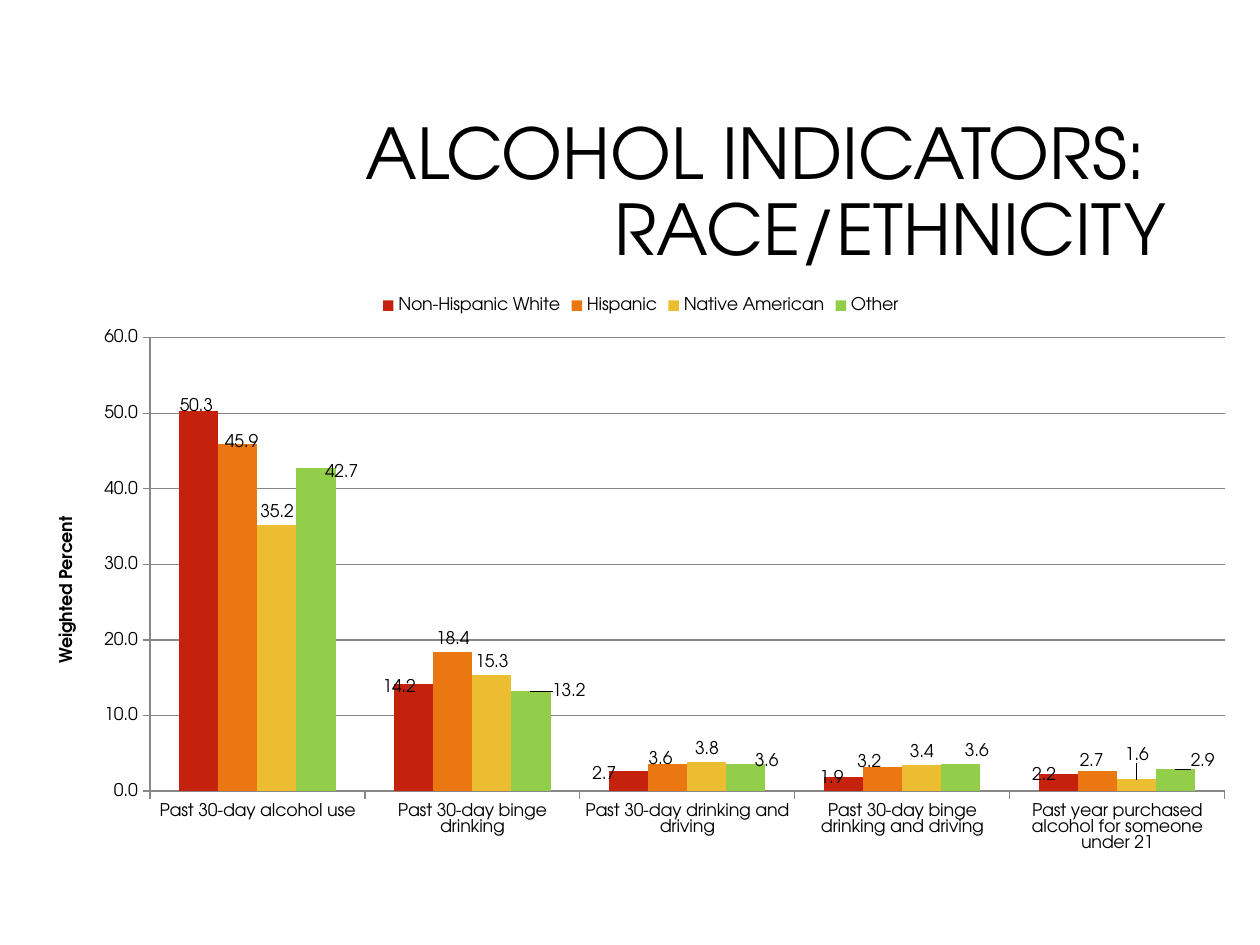
from pptx import Presentation
from pptx.chart.data import CategoryChartData
from pptx.dml.color import RGBColor
from pptx.enum.chart import (XL_CHART_TYPE, XL_LABEL_POSITION,
                             XL_LEGEND_POSITION, XL_TICK_MARK)
from pptx.enum.text import MSO_ANCHOR, PP_ALIGN
from pptx.oxml import parse_xml
from pptx.oxml.ns import nsdecls
from pptx.util import Inches, Pt

FONT = "TeX Gyre Adventor"
BLACK = RGBColor(0x00, 0x00, 0x00)
GRAY = RGBColor(0x87, 0x87, 0x87)
RED = RGBColor(0xC4, 0x22, 0x0D)
ORANGE = RGBColor(0xEB, 0x77, 0x12)
YELLOW = RGBColor(0xEC, 0xBD, 0x31)
GREEN = RGBColor(0x92, 0xCE, 0x4A)

CHART_WIDTH, CHART_HEIGHT = 9.67, 4.6
CATEGORIES = [
    "Past 30-day alcohol use",
    "Past 30-day binge drinking",
    "Past 30-day drinking and driving",
    "Past 30-day binge drinking and driving",
    "Past year purchased alcohol for someone under 21",
]
GROUPS = [
    ("Non-Hispanic White", RED, (50.3, 14.2, 2.7, 1.9, 2.2)),
    ("Hispanic", ORANGE, (45.9, 18.4, 3.6, 3.2, 2.7)),
    ("Native American", YELLOW, (35.2, 15.3, 3.8, 3.4, 1.6)),
    ("Other", GREEN, (42.7, 13.2, 3.6, 3.6, 2.9)),
]
LABEL_SHIFTS_PERCENT = {
    "Non-Hispanic White": {0: (-0.2, 1.4), 1: (-1.2, 2.8), 2: (-2, 2.8),
                           3: (-1, 2.4), 4: (-1.2, 2.4)},
    "Hispanic": {0: (0.3, 1.9), 2: (-0.6, 1.4), 3: (-1.1, 1.4),
                 4: (-0.5, 0.5)},
    "Native American": {4: (0, -1.9)},
    "Other": {0: (2.1, 2.8), 1: (3.1, 2.2), 2: (1.7, 1.7),
              3: (1.3, 0), 4: (2.2, 0.9)},
}


def layout_element(**settings):
    children = "".join(f'<c:{name} val="{value}"/>'
                       for name, value in settings.items())
    return parse_xml(f'<c:layout {nsdecls("c")}><c:manualLayout>{children}'
                     '</c:manualLayout></c:layout>')


def style_font(font, size, bold=False):
    font.name = FONT
    font.size = Pt(size)
    font.bold = bold
    font.color.rgb = BLACK


def add_title(slide):
    box = slide.shapes.add_textbox(Inches(2.38), Inches(0.84),
                                   Inches(6.97), Inches(1.41))
    frame = box.text_frame
    frame.word_wrap = True
    frame.vertical_anchor = MSO_ANCHOR.MIDDLE
    paragraph = frame.paragraphs[0]
    paragraph.alignment = PP_ALIGN.RIGHT
    paragraph.line_spacing = 0.9
    for index, text in enumerate(("ALCOHOL INDICATORS: ", "RACE/ETHNICITY")):
        if index:
            paragraph.add_line_break()
        run = paragraph.add_run()
        run.text = text
        style_font(run.font, 40)


def style_axis(axis):
    axis.major_tick_mark = XL_TICK_MARK.OUTSIDE
    axis.minor_tick_mark = XL_TICK_MARK.NONE
    axis.format.line.color.rgb = GRAY
    style_font(axis.tick_labels.font, 10)


def style_value_axis(axis):
    style_axis(axis)
    axis.minimum_scale = 0
    axis.maximum_scale = 60
    axis.major_unit = 10
    axis.has_major_gridlines = True
    axis.major_gridlines.format.line.color.rgb = GRAY
    axis.tick_labels.number_format = "0.0"
    axis.tick_labels.number_format_is_linked = False
    frame = axis.axis_title.text_frame
    frame._txBody.bodyPr.set("rot", "-5400000")
    frame._txBody.bodyPr.set("vert", "horz")
    run = frame.paragraphs[0].add_run()
    run.text = "Weighted Percent"
    style_font(run.font, 10, bold=True)


def style_series(series, color):
    series.format.fill.solid()
    series.format.fill.fore_color.rgb = color
    labels = series.data_labels
    labels.show_value = True
    labels.position = XL_LABEL_POSITION.OUTSIDE_END
    labels.number_format = "0.0"
    labels.number_format_is_linked = False
    style_font(labels.font, 10)
    shifts = LABEL_SHIFTS_PERCENT[series.name]
    for index in shifts:
        label = series.points[index].data_label
        label.position = XL_LABEL_POSITION.OUTSIDE_END
    for index_element in series._element.xpath("c:dLbls/c:dLbl/c:idx"):
        x, y = shifts[int(index_element.get("val"))]
        index_element.addnext(layout_element(x=x / 100, y=y / 100))


def place_plot_area(chart):
    plot_area = chart._chartSpace.chart.plotArea
    for layout in plot_area.xpath("c:layout"):
        plot_area.remove(layout)
    plot_area.insert(0, layout_element(
        layoutTarget="inner", xMode="edge", yMode="edge",
        x=0.94 / CHART_WIDTH, y=0.43 / CHART_HEIGHT,
        w=8.53 / CHART_WIDTH, h=3.6 / CHART_HEIGHT))


def add_indicator_chart(slide):
    data = CategoryChartData(number_format="0.0")
    data.categories = CATEGORIES
    for name, _, values in GROUPS:
        data.add_series(name, values)
    chart = slide.shapes.add_chart(
        XL_CHART_TYPE.COLUMN_CLUSTERED, Inches(0.25), Inches(2.25),
        Inches(CHART_WIDTH), Inches(CHART_HEIGHT), data).chart
    style_font(chart.font, 10)
    chart.has_title = False
    chart.has_legend = True
    chart.legend.position = XL_LEGEND_POSITION.TOP
    chart.legend.include_in_layout = False
    style_font(chart.legend.font, 10)
    plot = chart.plots[0]
    plot.vary_by_categories = False
    plot.gap_width = 150
    plot.overlap = 0
    for series, (_, color, _) in zip(plot.series, GROUPS):
        style_series(series, color)
    style_axis(chart.category_axis)
    style_value_axis(chart.value_axis)
    place_plot_area(chart)


def main():
    presentation = Presentation()
    presentation.slide_width = Inches(10)
    presentation.slide_height = Inches(7.5)
    slide = presentation.slides.add_slide(presentation.slide_layouts[6])
    add_title(slide)
    add_indicator_chart(slide)
    presentation.save("out.pptx")


if __name__ == "__main__":
    main()
